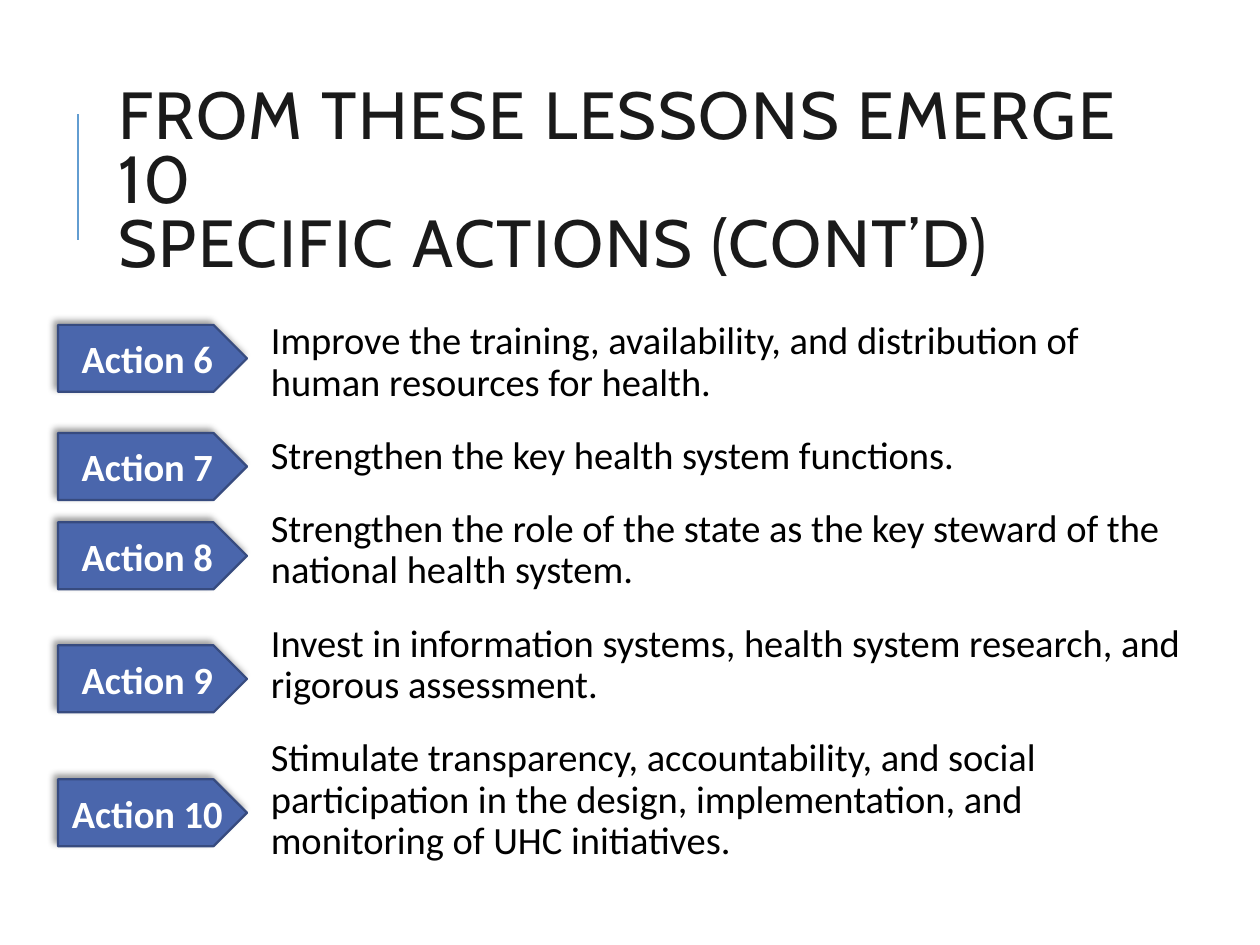
"""Build a slide that lists actions 6 to 10 beside arrow labels."""
from copy import deepcopy

from lxml import etree
from pptx import Presentation
from pptx.dml.color import RGBColor
from pptx.enum.shapes import MSO_CONNECTOR, MSO_SHAPE
from pptx.enum.text import MSO_ANCHOR, MSO_AUTO_SIZE, PP_ALIGN
from pptx.oxml.ns import qn
from pptx.util import Cm, Pt

LINE = MSO_CONNECTOR.STRAIGHT
ARROW = MSO_SHAPE.PENTAGON
MIDDLE, TOP = MSO_ANCHOR.MIDDLE, MSO_ANCHOR.TOP
FIXED = MSO_AUTO_SIZE.NONE
LEFT, CENTER = PP_ALIGN.LEFT, PP_ALIGN.CENTER

COLORS = {
    "rule": "629DD1",
    "title": "1A1A1A",
    "text": "000000",
    "label": "FFFFFF",
    "fill": "4A66AC",
    "edge": "374B7F",
    "shadow": "000000",
}
ACTIONS = [
    ("Action 6", 6.55, "Improve the training, availability, and distribution of human resources for health."),
    ("Action 7", 8.73, "Strengthen the key health system functions."),
    ("Action 8", 10.53, "Strengthen the role of the state as the key steward of the national health system."),
    ("Action 9", 13.01, "Invest in information systems, health system research, and rigorous assessment."),
    ("Action 10", 15.71, "Stimulate transparency, accountability, and social participation in the design, "
     "implementation, and monitoring of UHC initiatives."),
]


def color(name):
    return RGBColor.from_string(COLORS[name])


def write(para, text, size=22, font="Calibri", tint="text", bold=False,
          align=LEFT, lead=1.0, before=0, track=0):
    para.text = text
    para.alignment, para.line_spacing, para.space_before = align, lead, Pt(before)
    for run in para.runs:
        run.font.size, run.font.name, run.font.bold = Pt(size), font, bold
        run.font.color.rgb = color(tint)
        props = run._r.get_or_add_rPr()
        if track:
            props.set("spc", str(track))
    for gap in para._p.findall(qn("a:br")):
        gap.insert(0, deepcopy(props))


deck = Presentation()
deck.slide_width, deck.slide_height = Cm(25.4), Cm(19.05)
slide = deck.slides.add_slide(deck.slide_layouts[1])

rule = slide.shapes.add_connector(LINE, Cm(1.57), Cm(4.83), Cm(1.57), Cm(2.29))
rule.line.color.rgb, rule.line.width = color("rule"), Pt(1.5)
etree.SubElement(rule._element.spPr, qn("a:effectLst"))

title = slide.shapes.title
title.left, title.top, title.width, title.height = Cm(2.13), Cm(1.63), Cm(22.38), Cm(4.17)
frame = title.text_frame
frame.auto_size, frame.vertical_anchor = FIXED, MIDDLE
write(frame.paragraphs[0], "FROM THESE LESSONS EMERGE 10 \vSPECIFIC ACTIONS (CONT’D)",
      size=38, font="Cabin", tint="title", lead=0.8, track=100)

body = slide.placeholders[1]
body.left, body.top, body.width, body.height = Cm(5.08), Cm(6.35), Cm(19.05), Cm(11.18)
frame = body.text_frame
frame.auto_size, frame.vertical_anchor = FIXED, TOP
frame.margin_left = frame.margin_right = frame.margin_top = frame.margin_bottom = Cm(0.13)

for index, (label, top, text) in enumerate(ACTIONS):
    para = frame.add_paragraph() if index else frame.paragraphs[0]
    write(para, text, lead=0.9, before=18)
    props = para._p.get_or_add_pPr()
    props.set("marL", str(Cm(0.25)))
    props.set("indent", "0")
    etree.SubElement(props, qn("a:buNone"))

    arrow = slide.shapes.add_shape(ARROW, Cm(1.17), Cm(top), Cm(3.81), Cm(1.35))
    arrow.fill.solid()
    arrow.fill.fore_color.rgb = color("fill")
    arrow.line.color.rgb, arrow.line.width = color("edge"), Pt(1.25)
    arrow.shadow.inherit = False
    effects = arrow._element.spPr.find(qn("a:effectLst"))
    shade = etree.SubElement(effects, qn("a:outerShdw"), blurRad=str(Pt(4)),
                             dist=str(Pt(3)), dir="13500000", algn="br", rotWithShape="0")
    tone = etree.SubElement(shade, qn("a:srgbClr"), val=COLORS["shadow"])
    etree.SubElement(tone, qn("a:alpha"), val="40000")

    tag = arrow.text_frame
    tag.word_wrap, tag.vertical_anchor = False, MIDDLE
    tag.margin_left = tag.margin_top = tag.margin_bottom = Cm(0.13)
    tag.margin_right = 0
    write(tag.paragraphs[0], label, tint="label", bold=True, align=CENTER)

deck.save("out.pptx")
